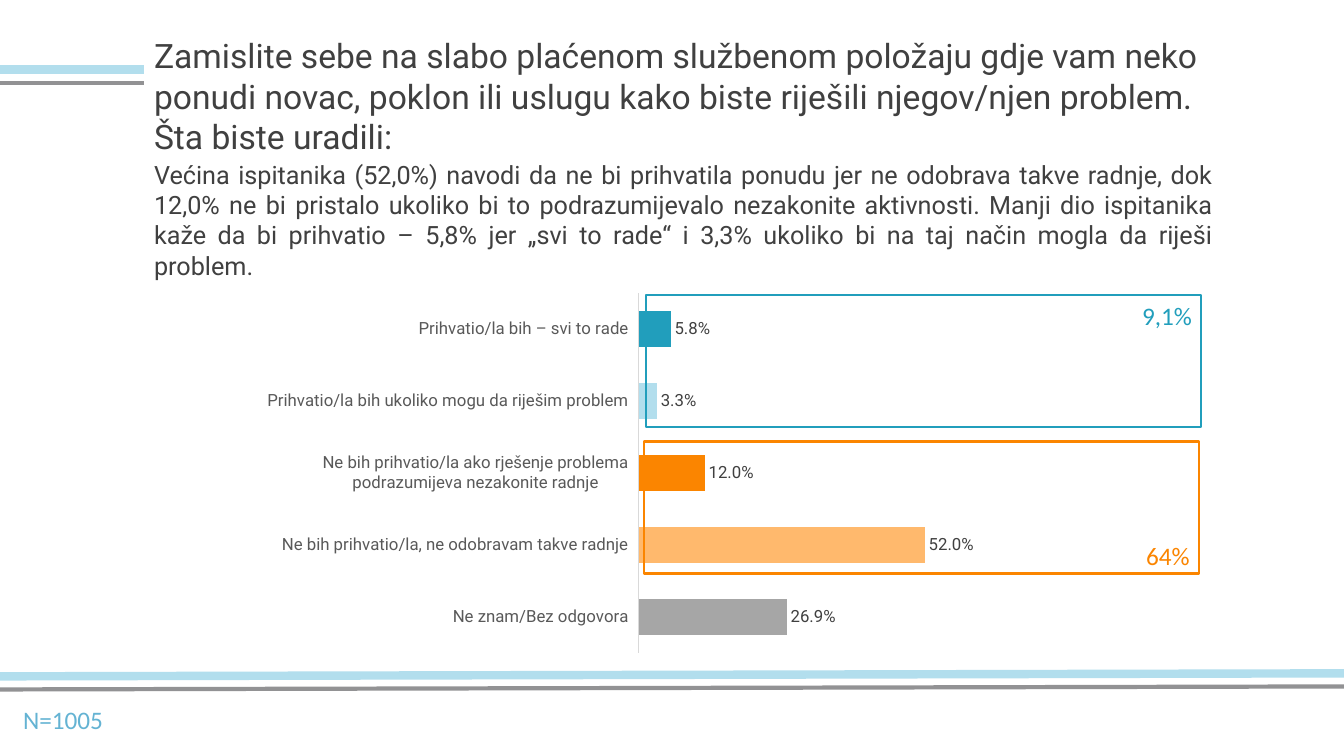
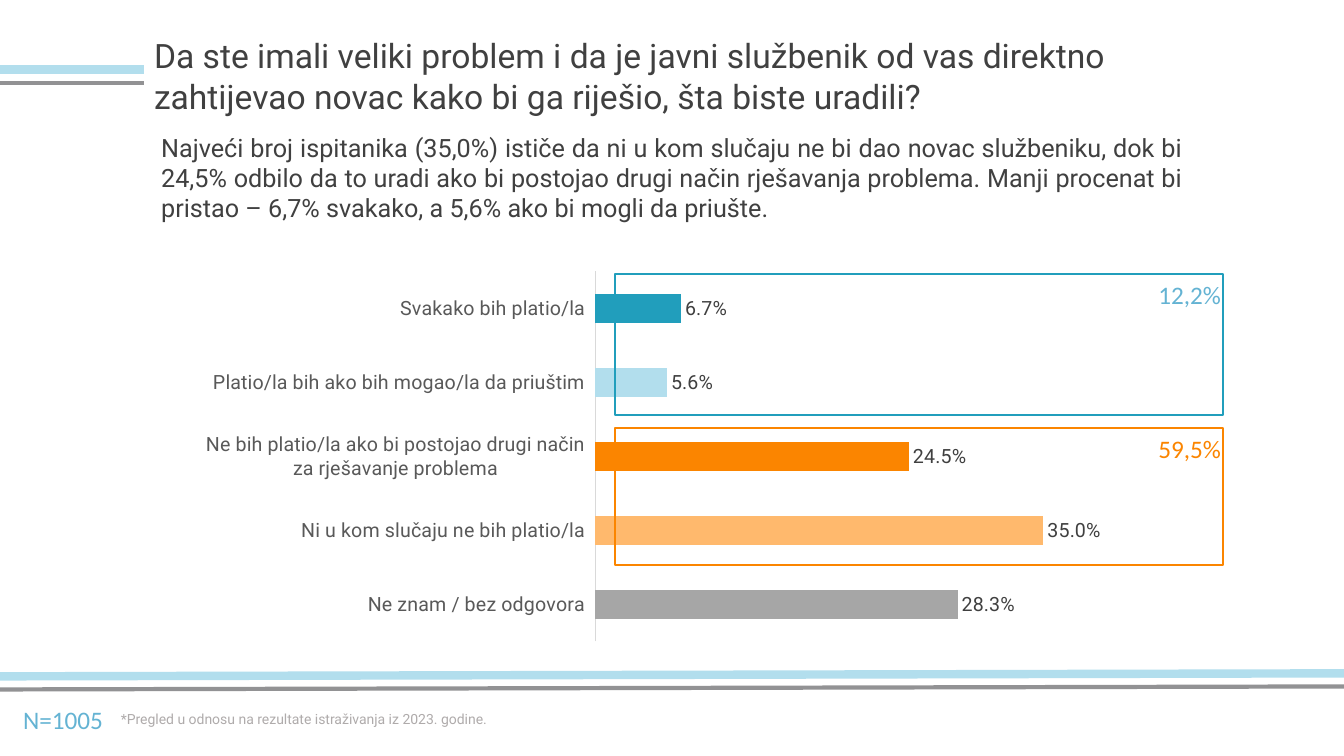
from dataclasses import dataclass

from lxml import etree
from pptx import Presentation
from pptx.chart.data import CategoryChartData
from pptx.dml.color import RGBColor
from pptx.enum.chart import XL_CHART_TYPE, XL_LABEL_POSITION, XL_TICK_LABEL_POSITION, XL_TICK_MARK
from pptx.enum.shapes import MSO_CONNECTOR, MSO_SHAPE
from pptx.enum.text import PP_ALIGN
from pptx.oxml.ns import qn
from pptx.slide import Slide
from pptx.util import Inches, Pt

BAR_CLUSTERED = XL_CHART_TYPE.BAR_CLUSTERED
OUTSIDE_END = XL_LABEL_POSITION.OUTSIDE_END
LABELS_LOW = XL_TICK_LABEL_POSITION.LOW
NO_TICKS = XL_TICK_MARK.NONE
STRAIGHT = MSO_CONNECTOR.STRAIGHT
RECTANGLE = MSO_SHAPE.RECTANGLE
LEFT = PP_ALIGN.LEFT
JUSTIFY = PP_ALIGN.JUSTIFY

DARK_GRAY = RGBColor(0x40, 0x40, 0x40)
LABEL_GRAY = RGBColor(0x59, 0x59, 0x59)
RULE_GRAY = RGBColor(0x92, 0x92, 0x94)
BAR_GRAY = RGBColor(0xA6, 0xA6, 0xA6)
NOTE_GRAY = RGBColor(0xAF, 0xAB, 0xAB)
AXIS_GRAY = RGBColor(0xD9, 0xD9, 0xD9)
TEAL = RGBColor(0x21, 0x9E, 0xBC)
PALE_BLUE = RGBColor(0xB2, 0xDE, 0xED)
SKY_BLUE = RGBColor(0x64, 0xB3, 0xD3)
ORANGE = RGBColor(0xFB, 0x85, 0x00)
PALE_ORANGE = RGBColor(0xFF, 0xB9, 0x6D)

BAR_COLORS = (BAR_GRAY, PALE_ORANGE, ORANGE, PALE_BLUE, TEAL)
TEXT_FONT = "Roboto"
FIGURE_FONT = "Calibri"
PERCENT = "0.0%"
SLIDE_WIDTH = 13.33

Box = tuple[float, float, float, float]


@dataclass(frozen=True)
class Rule:
    start: tuple[float, float]
    end: tuple[float, float]
    color: RGBColor
    weight: float


@dataclass(frozen=True)
class TextBlock:
    box: Box
    text: str
    size: int = 18
    color: RGBColor = DARK_GRAY
    font: str = TEXT_FONT
    alignment: PP_ALIGN = LEFT


@dataclass(frozen=True)
class AnswerChart:
    box: Box
    plot: Box
    answers: tuple[tuple[str, float], ...]
    maximum: float
    gap: int
    size: int


@dataclass(frozen=True)
class Frame:
    box: Box
    color: RGBColor


@dataclass(frozen=True)
class Question:
    texts: tuple[TextBlock, ...]
    chart: AnswerChart
    frames: tuple[Frame, ...]


RULES = (
    Rule((0, 6.84), (SLIDE_WIDTH, 6.81), RULE_GRAY, 3),
    Rule((0, 6.71), (SLIDE_WIDTH, 6.68), PALE_BLUE, 6),
    Rule((0, 0.82), (1.43, 0.82), RULE_GRAY, 3),
    Rule((0, 0.69), (1.43, 0.69), PALE_BLUE, 6),
)
SAMPLE_SIZE = TextBlock((0.13, 6.94, 1.05, 0.4), "N=1005", color=SKY_BLUE, font=FIGURE_FONT)


def title(text: str, height: float) -> TextBlock:
    return TextBlock((1.43, 0.3, 10.7, height), text, size=24)


def summary(box: Box, text: str) -> TextBlock:
    return TextBlock(box, text, alignment=JUSTIFY)


def total(left: float, top: float, text: str, color: RGBColor) -> TextBlock:
    return TextBlock((left, top, 1.05, 0.4), text, color=color, font=FIGURE_FONT)


QUESTIONS = (
    Question(
        texts=(
            title(
                "Zamislite sebe na slabo plaćenom službenom položaju gdje vam neko ponudi novac, "
                "poklon ili uslugu kako biste riješili njegov/njen problem. Šta biste uradili:",
                1.31,
            ),
            summary(
                (1.43, 1.53, 10.7, 1.01),
                "Većina ispitanika (52,0%) navodi da ne bi prihvatila ponudu jer ne odobrava takve "
                "radnje, dok 12,0% ne bi pristalo ukoliko bi to podrazumijevalo nezakonite "
                "aktivnosti. Manji dio ispitanika kaže da bi prihvatio – 5,8% jer „svi to rade“ "
                "i 3,3% ukoliko bi na taj način mogla da riješi problem.",
            ),
            total(11.23, 2.93, "9,1%", TEAL),
            total(11.27, 5.31, "64%", ORANGE),
        ),
        chart=AnswerChart(
            box=(2.5, 2.65, 8.56, 4.03),
            plot=(0.448, 0.064, 0.51, 0.886),
            answers=(
                ("Ne znam/Bez odgovora", 0.269),
                ("Ne bih prihvatio/la, ne odobravam takve radnje", 0.52),
                ("Ne bih prihvatio/la ako rješenje problema podrazumijeva nezakonite radnje", 0.12),
                ("Prihvatio/la bih ukoliko mogu da riješim problem", 0.033),
                ("Prihvatio/la bih – svi to rade", 0.058),
            ),
            maximum=0.8,
            gap=102,
            size=12,
        ),
        frames=(
            Frame((6.41, 2.93, 5.5, 1.31), TEAL),
            Frame((6.39, 4.38, 5.5, 1.31), ORANGE),
        ),
    ),
    Question(
        texts=(
            title(
                "Da ste imali veliki problem i da je javni službenik od vas direktno zahtijevao "
                "novac kako bi ga riješio, šta biste uradili?",
                0.91,
            ),
            summary(
                (1.5, 1.26, 10.33, 1.01),
                "Najveći broj ispitanika (35,0%) ističe da ni u kom slučaju ne bi dao novac "
                "službeniku, dok bi 24,5% odbilo da to uradi ako bi postojao drugi način "
                "rješavanja problema. Manji procenat bi pristao – 6,7% svakako, a 5,6% ako bi "
                "mogli da priušte.",
            ),
            TextBlock(
                (1.1, 7, 7, 0.27),
                "*Pregled u odnosu na rezultate istraživanja iz 2023. godine.",
                size=10,
                color=NOTE_GRAY,
            ),
            total(11.39, 2.72, "12,2%", SKY_BLUE),
            total(11.39, 4.25, "59,5%", ORANGE),
        ),
        chart=AnswerChart(
            box=(1.95, 2.54, 9.44, 3.98),
            plot=(0.419, 0.038, 0.538, 0.923),
            answers=(
                ("Ne znam / bez odgovora", 0.283),
                ("Ni u kom slučaju ne bih platio/la", 0.35),
                ("Ne bih platio/la ako bi postojao drugi način za rješavanje problema", 0.245),
                ("Platio/la bih ako bih mogao/la da priuštim", 0.056),
                ("Svakako bih platio/la", 0.067),
            ),
            maximum=0.4,
            gap=152,
            size=14,
        ),
        frames=(
            Frame((6.1, 2.72, 6.03, 1.4), TEAL),
            Frame((6.1, 4.25, 6.03, 1.36), ORANGE),
        ),
    ),
)


def style_font(font, size: int, color: RGBColor, name: str = TEXT_FONT) -> None:
    font.size = Pt(size)
    font.name = name
    font.color.rgb = color


def draw_rule(slide: Slide, rule: Rule) -> None:
    ends = (Inches(value) for value in rule.start + rule.end)
    connector = slide.shapes.add_connector(STRAIGHT, *ends)
    connector.line.color.rgb = rule.color
    connector.line.width = Pt(rule.weight)
    etree.SubElement(connector.element.spPr, qn("a:effectLst"))


def draw_text(slide: Slide, block: TextBlock) -> None:
    frame = slide.shapes.add_textbox(*map(Inches, block.box)).text_frame
    frame.word_wrap = True
    paragraph = frame.paragraphs[0]
    paragraph.text = block.text
    paragraph.alignment = block.alignment
    style_font(paragraph.font, block.size, block.color, block.font)


def draw_frame(slide: Slide, frame: Frame) -> None:
    shape = slide.shapes.add_shape(RECTANGLE, *map(Inches, frame.box))
    shape.shadow.inherit = False
    shape.fill.background()
    shape.line.color.rgb = frame.color
    shape.line.width = Pt(1.5)


def place_plot(plot_area, plot: Box) -> None:
    for layout in plot_area.findall(qn("c:layout")):
        plot_area.remove(layout)
    layout = etree.Element(qn("c:layout"))
    manual = etree.SubElement(layout, qn("c:manualLayout"))
    settings = [("layoutTarget", "inner"), ("xMode", "edge"), ("yMode", "edge")]
    settings += [(key, str(value)) for key, value in zip("xywh", plot)]
    for key, value in settings:
        etree.SubElement(manual, qn(f"c:{key}")).set("val", value)
    plot_area.insert(0, layout)


def draw_chart(slide: Slide, answer_chart: AnswerChart) -> None:
    data = CategoryChartData(number_format=PERCENT)
    data.categories = [answer for answer, _ in answer_chart.answers]
    data.add_series("Series 1", [share for _, share in answer_chart.answers])
    chart = slide.shapes.add_chart(BAR_CLUSTERED, *map(Inches, answer_chart.box), data).chart
    chart.has_legend = False
    chart.has_title = False
    style_font(chart.font, answer_chart.size, DARK_GRAY)

    category_axis = chart.category_axis
    category_axis.major_tick_mark = NO_TICKS
    category_axis.minor_tick_mark = NO_TICKS
    category_axis.tick_label_position = LABELS_LOW
    category_axis.format.line.color.rgb = AXIS_GRAY
    category_axis.format.line.width = Pt(0.75)
    style_font(category_axis.tick_labels.font, answer_chart.size, LABEL_GRAY)

    value_axis = chart.value_axis
    value_axis.minimum_scale = 0
    value_axis.maximum_scale = answer_chart.maximum
    value_axis.has_major_gridlines = False
    value_axis.visible = False

    plot = chart.plots[0]
    plot.gap_width = answer_chart.gap
    plot.vary_by_categories = False
    plot.has_data_labels = True
    labels = plot.data_labels
    labels.show_value = True
    labels.position = OUTSIDE_END
    labels.number_format = PERCENT
    labels.number_format_is_linked = False
    style_font(labels.font, answer_chart.size, DARK_GRAY)
    for index, color in enumerate(BAR_COLORS):
        fill = plot.series[0].points[index].format.fill
        fill.solid()
        fill.fore_color.rgb = color
    place_plot(chart.element.chart.plotArea, answer_chart.plot)


def draw_question(slide: Slide, question: Question) -> None:
    for rule in RULES:
        draw_rule(slide, rule)
    draw_chart(slide, question.chart)
    for frame in question.frames:
        draw_frame(slide, frame)
    for block in (SAMPLE_SIZE, *question.texts):
        draw_text(slide, block)


def main() -> None:
    presentation = Presentation()
    presentation.slide_width = Inches(SLIDE_WIDTH)
    presentation.slide_height = Inches(7.5)
    blank_layout = presentation.slide_layouts[6]
    for question in QUESTIONS:
        draw_question(presentation.slides.add_slide(blank_layout), question)
    presentation.save("out.pptx")


if __name__ == "__main__":
    main()
